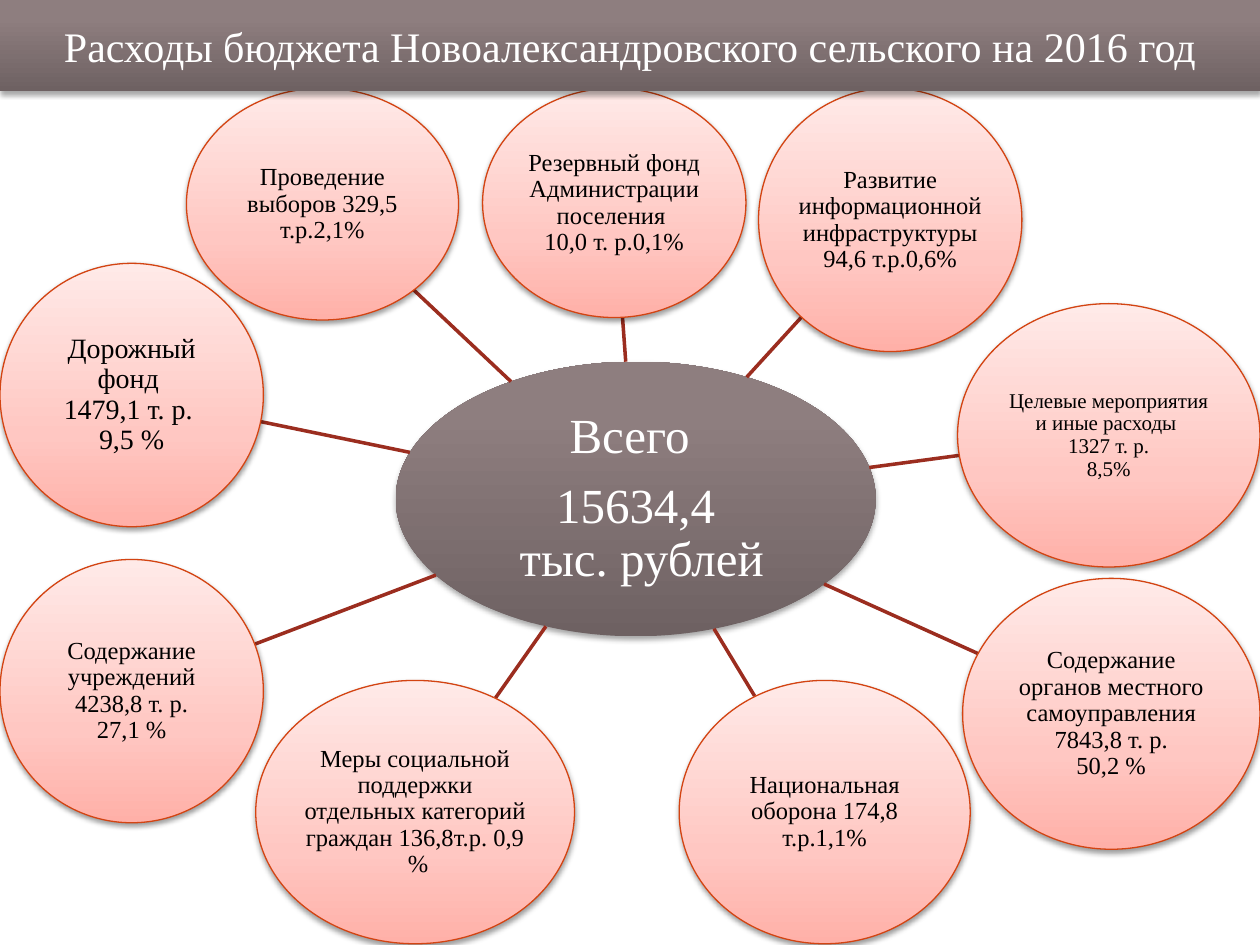
from copy import deepcopy
from dataclasses import dataclass
from math import hypot

from lxml.etree import SubElement
from pptx import Presentation
from pptx.dml.color import RGBColor
from pptx.enum.shapes import MSO_CONNECTOR, MSO_SHAPE
from pptx.enum.text import MSO_ANCHOR, MSO_AUTO_SIZE, PP_ALIGN
from pptx.oxml.ns import qn
from pptx.util import Inches, Pt


@dataclass(frozen=True)
class Theme:
    font: str = "Times New Roman"
    light_text: str = "FFFFFF"
    dark_text: str = "000000"
    spoke: str = "9B2D1F"
    outline: str = "D34412"
    grey: tuple = ((0, "6E6162"), (0.8, "8E7E7F"), (1, "8F7E80"))
    pink: tuple = ((0, "FFB0A8"), (0.35, "FFC7C2"), (1, "FFEAE8"))
    title_size: int = 24
    hub_size: int = 28


@dataclass(frozen=True)
class Oval:
    left: float
    top: float
    width: float
    height: float
    size: int
    lines: tuple

    @property
    def center(self):
        return self.left + self.width / 2, self.top + self.height / 2

    def edge_towards(self, other):
        x, y = self.center
        dx, dy = other.center[0] - x, other.center[1] - y
        scale = 1 / hypot(dx / (self.width / 2), dy / (self.height / 2))
        return x + dx * scale, y + dy * scale


THEME = Theme()

HUB = Oval(3.14, 2.87, 3.81, 2.18, THEME.hub_size,
           ("Всего ", "15634,4", " тыс. рублей"))

EXPENSES = (
    Oval(0, 2.09, 2.09, 2.09, 16,
         ("Дорожный фонд ", "1479,1 т. р. ", "9,5 %")),
    Oval(3.83, 0.7, 2.09, 1.82, 14,
         ("Резервный фонд Администрации поселения ", "10,0 т. р.0,1%")),
    Oval(6.02, 0.7, 2.09, 2.09, 14,
         ("Развитие информационной инфраструктуры 94,6 т.р.0,6%",)),
    Oval(7.6, 2.41, 2.4, 2.09, 12,
         ("Целевые мероприятия и иные расходы ", "1327 т. р.", "8,5%")),
    Oval(7.64, 4.59, 2.36, 2.15, 14,
         ("Содержание органов местного самоуправления 7843,8 т. р.", "50,2 %")),
    Oval(5.39, 5.4, 2.31, 2.09, 14,
         ("Национальная оборона 174,8 т.р.1,1%",)),
    Oval(2.03, 5.4, 2.53, 2.09, 14,
         ("Меры социальной поддержки отдельных категорий граждан 136,8т.р. 0,9",
          " %")),
    Oval(0, 4.44, 2.09, 2.09, 14,
         ("Содержание учреждений\v4238,8 т. р.", "27,1 %")),
    Oval(1.48, 0.7, 2.16, 1.84, 14,
         ("Проведение выборов 329,5 т.р.2,1%",)),
)


def color(value):
    return RGBColor.from_string(value)


def fill_gradient(shape, stops):
    shape.fill.gradient()
    shape.fill.gradient_angle = 90
    stop_list = shape._element.spPr.find(qn("a:gradFill")).find(qn("a:gsLst"))
    stop_list.append(deepcopy(stop_list[0]))
    for stop, (position, value) in zip(shape.fill.gradient_stops, stops):
        stop.position = position
        stop.color.rgb = color(value)


def add_shadow(shape, opacity, distance):
    shape.shadow.inherit = False
    effects = shape._element.spPr.find(qn("a:effectLst"))
    outer = SubElement(effects, qn("a:outerShdw"), blurRad=str(Pt(3.1)),
                       dist=str(Pt(distance)), dir="5400000", rotWithShape="0")
    shade = SubElement(outer, qn("a:srgbClr"), val="000000")
    SubElement(shade, qn("a:alpha"), val=str(opacity * 1000))


def write_text(shape, lines, size, value, spacing):
    frame = shape.text_frame
    frame.text = "\n".join(lines)
    frame.word_wrap = True
    frame.auto_size = MSO_AUTO_SIZE.NONE
    frame.vertical_anchor = MSO_ANCHOR.MIDDLE
    for para in frame.paragraphs:
        para.alignment = PP_ALIGN.CENTER
        para.line_spacing = spacing
        para.space_before = para.space_after = Pt(0)
        for span in para.runs:
            span.font.name = THEME.font
            span.font.size = Pt(size)
            span.font.color.rgb = color(value)


def add_oval(page, oval, stops, text_color, margin):
    shape = page.shapes.add_shape(
        MSO_SHAPE.OVAL, Inches(oval.left), Inches(oval.top),
        Inches(oval.width), Inches(oval.height))
    fill_gradient(shape, stops)
    write_text(shape, oval.lines, oval.size, text_color, 0.9)
    frame = shape.text_frame
    frame.margin_left = frame.margin_right = Inches(margin)
    frame.margin_top = frame.margin_bottom = Inches(margin)
    return shape


def add_hub(page):
    shape = add_oval(page, HUB, THEME.grey, THEME.light_text, 0.02)
    shape.line.fill.background()
    add_shadow(shape, 35, 1.8)
    shape.text_frame.paragraphs[0].space_after = Pt(0.35 * HUB.size)


def add_spoke(page, expense):
    ends = HUB.edge_towards(expense) + expense.edge_towards(HUB)
    spoke = page.shapes.add_connector(
        MSO_CONNECTOR.STRAIGHT, *(Inches(end) for end in ends))
    spoke.line.color.rgb = color(THEME.spoke)
    spoke.line.width = Pt(2)
    SubElement(spoke._element.spPr, qn("a:effectLst"))


def add_expense(page, expense):
    shape = add_oval(page, expense, THEME.pink, THEME.dark_text, 0.01)
    shape.line.color.rgb = color(THEME.outline)
    shape.line.width = Pt(0.75)
    add_shadow(shape, 38, 1.6)


def format_title(page, deck):
    title = page.shapes.title
    title.left, title.top = Inches(0), Inches(0)
    title.width, title.height = deck.slide_width, Inches(0.72)
    fill_gradient(title, THEME.grey)
    add_shadow(title, 35, 1.8)
    write_text(title, ("Расходы бюджета Новоалександровского сельского на 2016 год",),
               THEME.title_size, THEME.light_text, 1.0)
    page.shapes._spTree.append(title._element)


def main():
    deck = Presentation()
    deck.slide_width, deck.slide_height = Inches(10), Inches(7.5)
    page = deck.slides.add_slide(deck.slide_layouts[5])
    add_hub(page)
    for expense in EXPENSES:
        add_spoke(page, expense)
        add_expense(page, expense)
    format_title(page, deck)
    deck.save("out.pptx")


if __name__ == "__main__":
    main()
